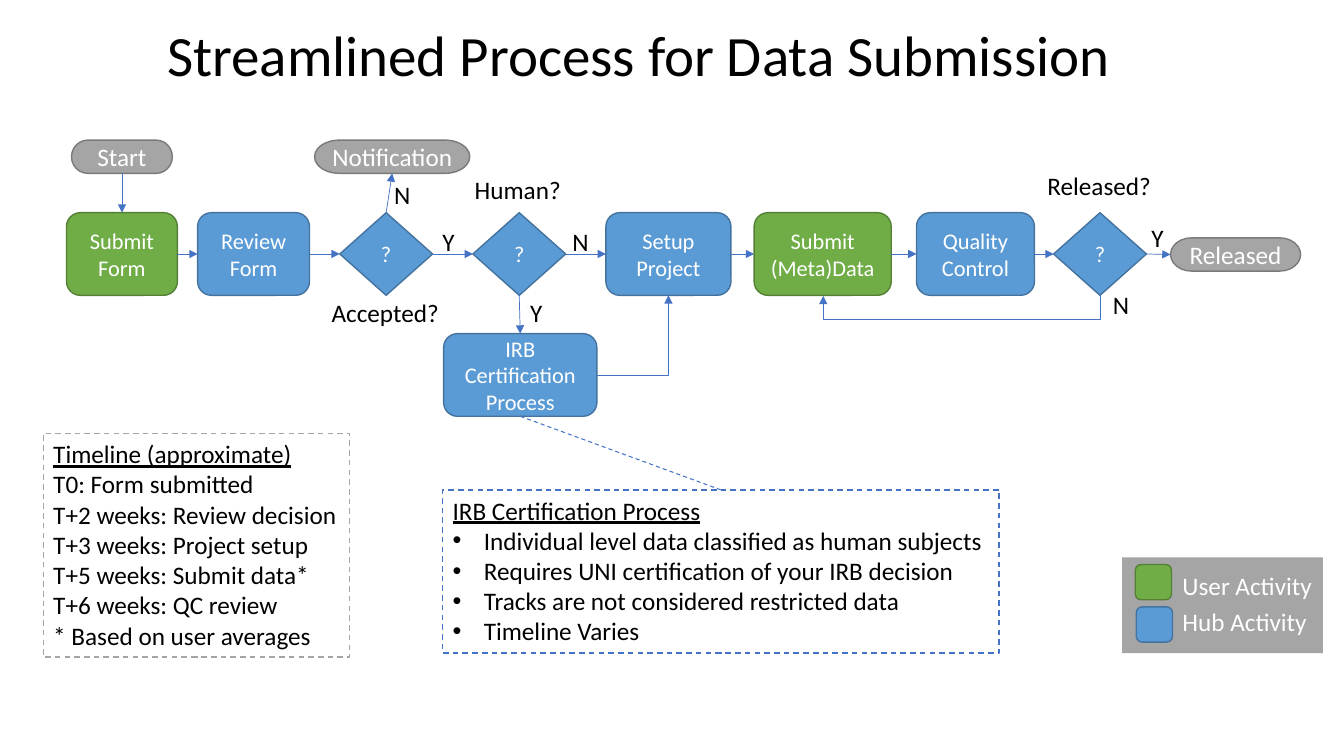
from lxml import etree
from pptx import Presentation
from pptx import util as u
from pptx.dml.color import RGBColor
from pptx.enum import dml, shapes, text
from pptx.oxml.ns import qn

COLORS = {"black": "000000", "white": "FFFFFF", "user": "70AD47", "user_edge": "538035",
          "hub": "5B9BD5", "hub_edge": "43739E", "end": "A5A5A5", "end_edge": "7A7A7A",
          "arrow": "4472C4"}
FORMS = shapes.MSO_SHAPE
TOP, LEFT, BOTTOM, RIGHT = range(4)


def grid(count):
    """Turn grid units, of which ten make an inch, into a length."""
    return u.Inches(count / 10)


def color(name):
    """Look up a named colour."""
    return RGBColor.from_string(COLORS[name])


def write(holder, lines, size=18, ink="black", align=None, anchor=text.MSO_ANCHOR.TOP,
          wrap=False, grow=True, spacing=None, heading=False, bullets=False):
    """Fill a shape with paragraphs in one format."""
    frame = holder.text_frame
    frame.word_wrap = wrap
    frame.vertical_anchor = anchor
    frame.auto_size = text.MSO_AUTO_SIZE.SHAPE_TO_FIT_TEXT if grow else text.MSO_AUTO_SIZE.NONE
    for index, line in enumerate(lines):
        paragraph = frame.add_paragraph() if index else frame.paragraphs[0]
        paragraph.alignment = align or text.PP_ALIGN.LEFT
        paragraph.line_spacing = spacing
        run = paragraph.add_run()
        run.text = line
        run.font.name, run.font.size = "Calibri", u.Pt(size)
        run.font.color.rgb = color(ink)
        run.font.underline = True if heading and index == 0 else None
        if bullets and index:
            properties = paragraph._p.get_or_add_pPr()
            properties.set("marL", str(grid(3.1)))
            properties.set("indent", str(-grid(3.1)))
            etree.SubElement(properties, qn("a:buFont"), typeface="Arial")
            etree.SubElement(properties, qn("a:buChar"), char="•")


def label(slide, left, top, width, words, height=4, **style):
    """Place free text."""
    box = slide.shapes.add_textbox(*map(grid, (left, top, width, height)))
    write(box, [words], **style)


def panel(slide, form, box, fill, edge=None, dashed=False):
    """Draw a filled shape, outlined when an edge colour is given."""
    area = slide.shapes.add_shape(form, *map(grid, box))
    area.shadow.inherit = False
    area.fill.solid()
    area.fill.fore_color.rgb = color(fill)
    if edge:
        area.line.color.rgb = color(edge)
        area.line.width = u.Pt(1)
        if dashed:
            area.line.dash_style = dml.MSO_LINE.DASH
    else:
        area.line.fill.background()
    return area


def node(slide, form, box, kind, lines, size=16):
    """Draw one captioned node of the flow."""
    step = panel(slide, form, box, kind, kind + "_edge")
    write(step, lines, size=size, ink="white", align=text.PP_ALIGN.CENTER,
          anchor=text.MSO_ANCHOR.MIDDLE, wrap=True, grow=False)
    return step


def connect(slide, ends, form=shapes.MSO_CONNECTOR.STRAIGHT, width=0.5, arrow=True):
    """Draw a plain connector between two points."""
    link = slide.shapes.add_connector(form, *ends)
    link.line.color.rgb = color("arrow")
    link.line.width = u.Pt(width)
    if arrow:
        etree.SubElement(link.line._get_or_add_ln(), qn("a:tailEnd"), type="triangle")
    etree.SubElement(link._element.spPr, qn("a:effectLst"))
    return link


def join(slide, source, target, exit_side=RIGHT, entry_side=LEFT, **style):
    """Glue a connector to the sides of two shapes."""
    link = connect(slide, (0, 0, 0, 0), **style)
    link.begin_connect(source, exit_side)
    link.end_connect(target, entry_side)
    return link


def corner(slide, source, target):
    """Lead an arrow rightwards and then up into the target."""
    ends = (source.left + source.width, source.top + source.height // 2,
            target.left + target.width // 2, target.top + target.height)
    link = connect(slide, ends, form=shapes.MSO_CONNECTOR.ELBOW)
    link._element.spPr.find(qn("a:prstGeom")).set("prst", "bentConnector2")


def loop_back(slide, source, target, drop=2.5, rise=0.1):
    """Lead an arrow below the row, back to an earlier step."""
    start = source.left + source.width // 2
    finish = target.left + target.width // 2
    center, base = (start + finish) // 2, source.top + source.height
    half = (start - finish) // 2
    link = connect(slide, (center, base - half, center + grid(rise), base + half),
                   form=shapes.MSO_CONNECTOR.ELBOW)
    properties = link._element.spPr
    properties.find(qn("a:xfrm")).set("rot", "5400000")
    adjustments = properties.find(qn("a:prstGeom")).get_or_add_avLst()
    etree.SubElement(adjustments, qn("a:gd"), name="adj1",
                     fmla=f"val {round(drop / rise * 100000)}")


def flow(slide, left, top):
    """Draw the submission flow and return its certification step."""
    row, height = top + 7.2, 8.2
    steps = []
    for x, width, kind, words in [
            (0, 11, "user", "Submit Form"), (13, 11.1, "hub", "Review Form"),
            (27.1, 9.2, "hub", "?"), (40.3, 9.2, "hub", "?"),
            (53.5, 12.4, "hub", "Setup Project"), (68.2, 13.6, "user", "Submit (Meta)Data"),
            (84.3, 11.7, "hub", "Quality Control"), (97.9, 9.2, "hub", "?")]:
        form = FORMS.DIAMOND if words == "?" else FORMS.ROUNDED_RECTANGLE
        steps.append(node(slide, form, (left + x, row, width, height), kind, [words]))
    submit, review, accepted, human, setup, upload, quality, check = steps
    certify = node(slide, FORMS.ROUNDED_RECTANGLE, (left + 37.4, top + 19.2, 15.2, height),
                   "hub", ["IRB Certification", "Process"])
    start, notice, released = [
        node(slide, FORMS.FLOWCHART_TERMINATOR, (left + x, top + y, width, 3.3), "end", [words], 18)
        for x, y, width, words in [(0.5, 0, 10, "Start"), (24.6, 0, 15.4, "Notification"),
                                   (109.5, 9.7, 12.9, "Released")]]
    for source, target in zip(steps, steps[1:] + [released]):
        join(slide, source, target)
    join(slide, start, submit, BOTTOM, TOP)
    join(slide, accepted, notice, TOP, BOTTOM)
    join(slide, human, certify, BOTTOM, TOP)
    corner(slide, certify, setup)
    loop_back(slide, check, upload)
    for x, y, width, words in [
            (25.3, 15.1, 12.8, "Accepted?"), (39.5, 2.9, 10.7, "Human?"),
            (96.3, 2.5, 12.4, "Released?"), (31.5, 3.4, 3.6, "N"), (49.2, 8.1, 3.6, "N"),
            (102.8, 14.3, 3.6, "N"), (36.3, 8.1, 3.2, "Y"), (45, 15.1, 3.2, "Y"),
            (106.6, 7.7, 3.2, "Y")]:
        label(slide, left + x, top + y, width, words)
    return certify


def legend(slide, left, top, width, height):
    """Explain the two activity colours."""
    panel(slide, FORMS.RECTANGLE, (left, top, width, height), "end")
    for index, (kind, words) in enumerate([("user", "User Activity"), ("hub", "Hub Activity")]):
        panel(slide, FORMS.ROUNDED_RECTANGLE,
              (left + 1.3 + index * 0.1, top + 0.7 + index * 4.2, 3.6, 3.5), kind, kind + "_edge")
        label(slide, left + 5, top + 0.8 + index * 3.6, 15, words, ink="white")


def note(slide, box, edge, lines, **style):
    """Draw a dashed box with an underlined heading."""
    area = panel(slide, FORMS.RECTANGLE, box, "white", edge, dashed=True)
    write(area, lines, heading=True, **style)
    return area


def main():
    """Build and save the slide."""
    deck = Presentation()
    deck.slide_width, deck.slide_height = u.Inches(13.33), u.Inches(7.5)
    slide = deck.slides.add_slide(deck.slide_layouts[6])
    label(slide, 15.6, 2.5, 120 - 2.5, "Streamlined Process for Data Submission", height=7,
          size=40.7, anchor=text.MSO_ANCHOR.MIDDLE, wrap=True, grow=False, spacing=0.8)
    certify = flow(slide, 6.6, 13.9)
    legend(slide, 111.3, 55.3, 19.9, 9.5)
    note(slide, (4.3, 43, 30.4, 22.2), "end", [
        "Timeline (approximate)", "T0: Form submitted", "T+2 weeks: Review decision",
        "T+3 weeks: Project setup", "T+5 weeks: Submit data*", "T+6 weeks: QC review",
        "* Based on user averages"])
    details = note(slide, (43.9, 48.6, 55.2, 16.2), "arrow", [
        "IRB Certification Process", "Individual level data classified as human subjects",
        "Requires UNI certification of your IRB decision",
        "Tracks are not considered restricted data", "Timeline Varies"], bullets=True)
    callout = join(slide, details, certify, TOP, BOTTOM, width=0.75, arrow=False)
    callout.line.dash_style = dml.MSO_LINE.DASH
    deck.save("out.pptx")


if __name__ == "__main__":
    main()
